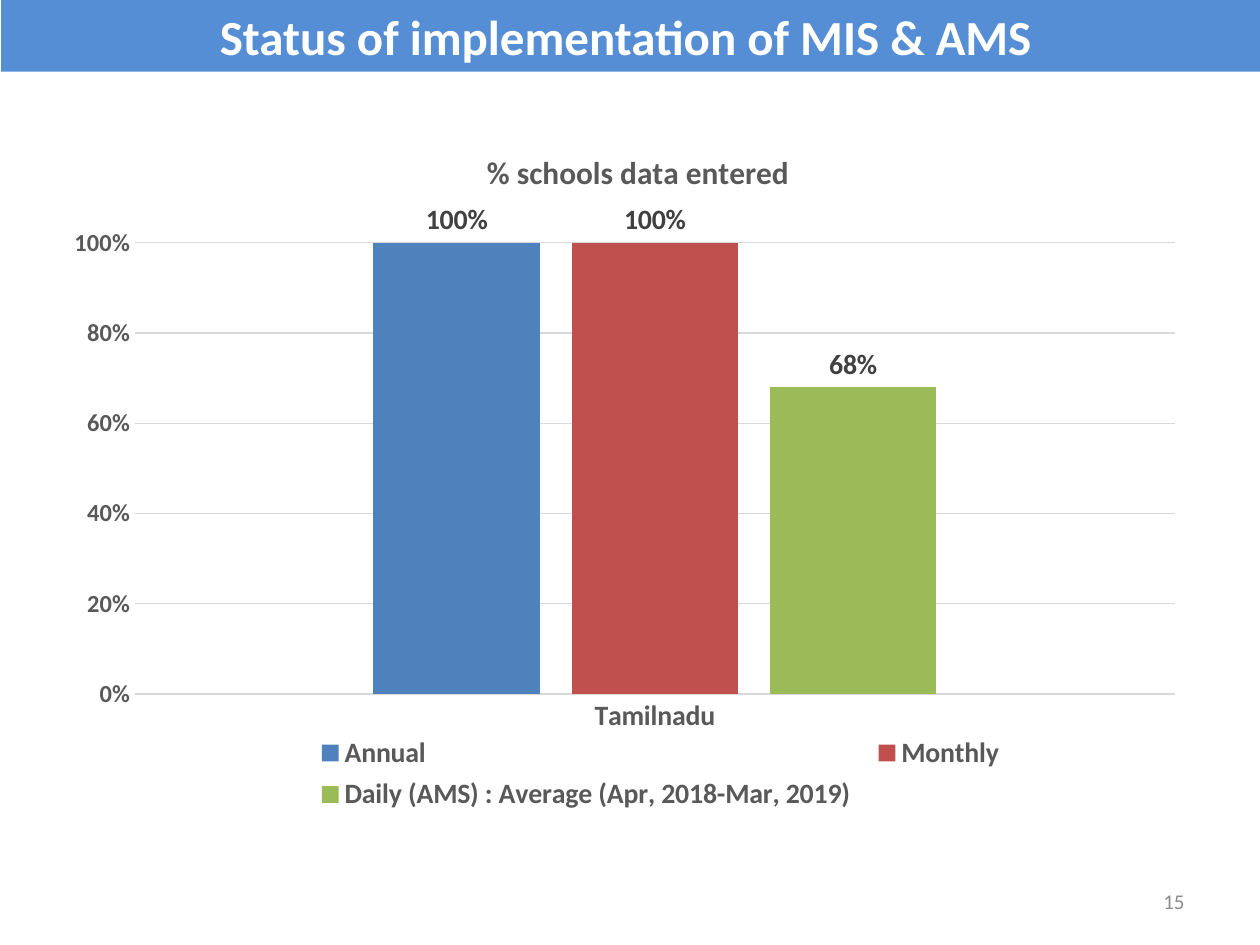
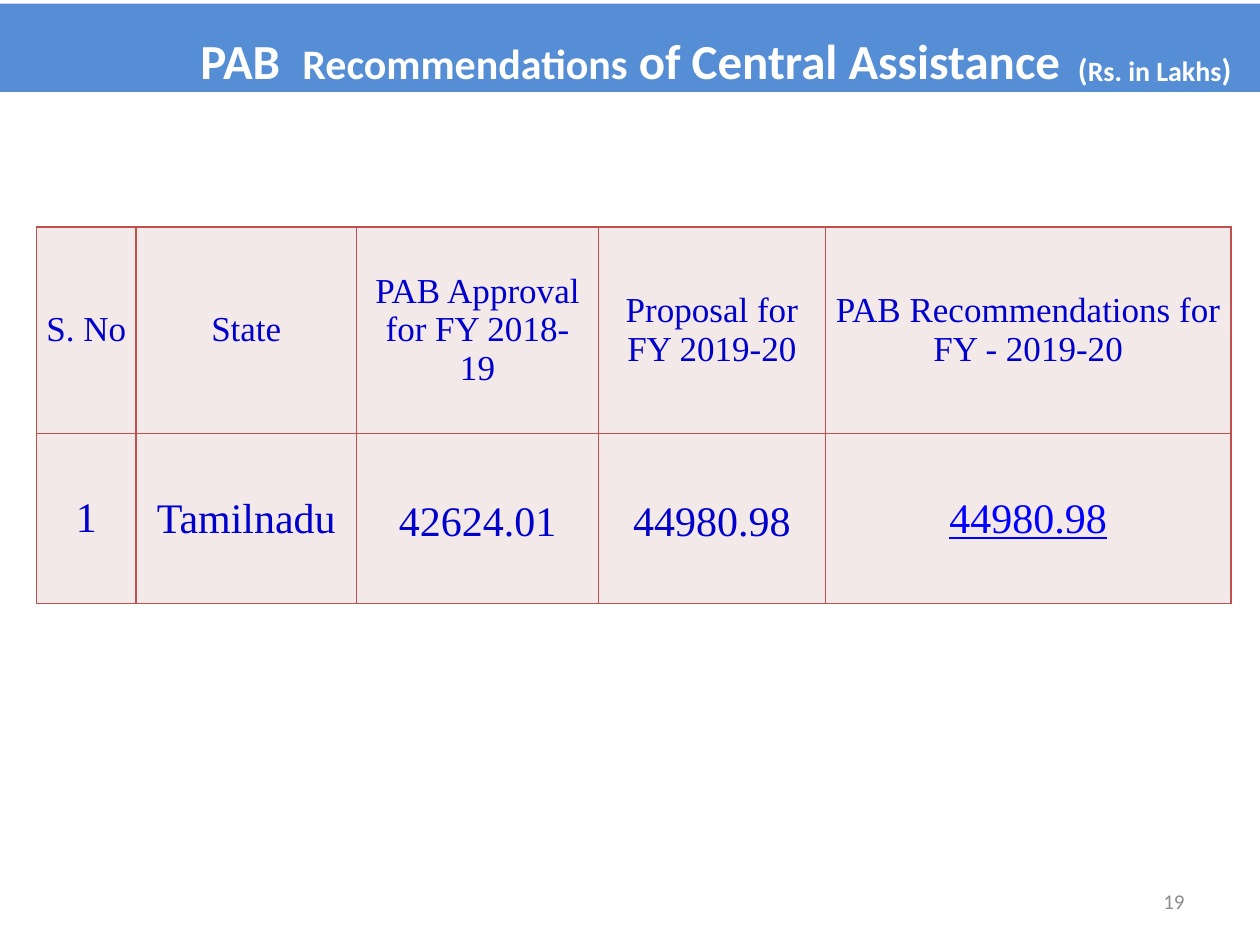
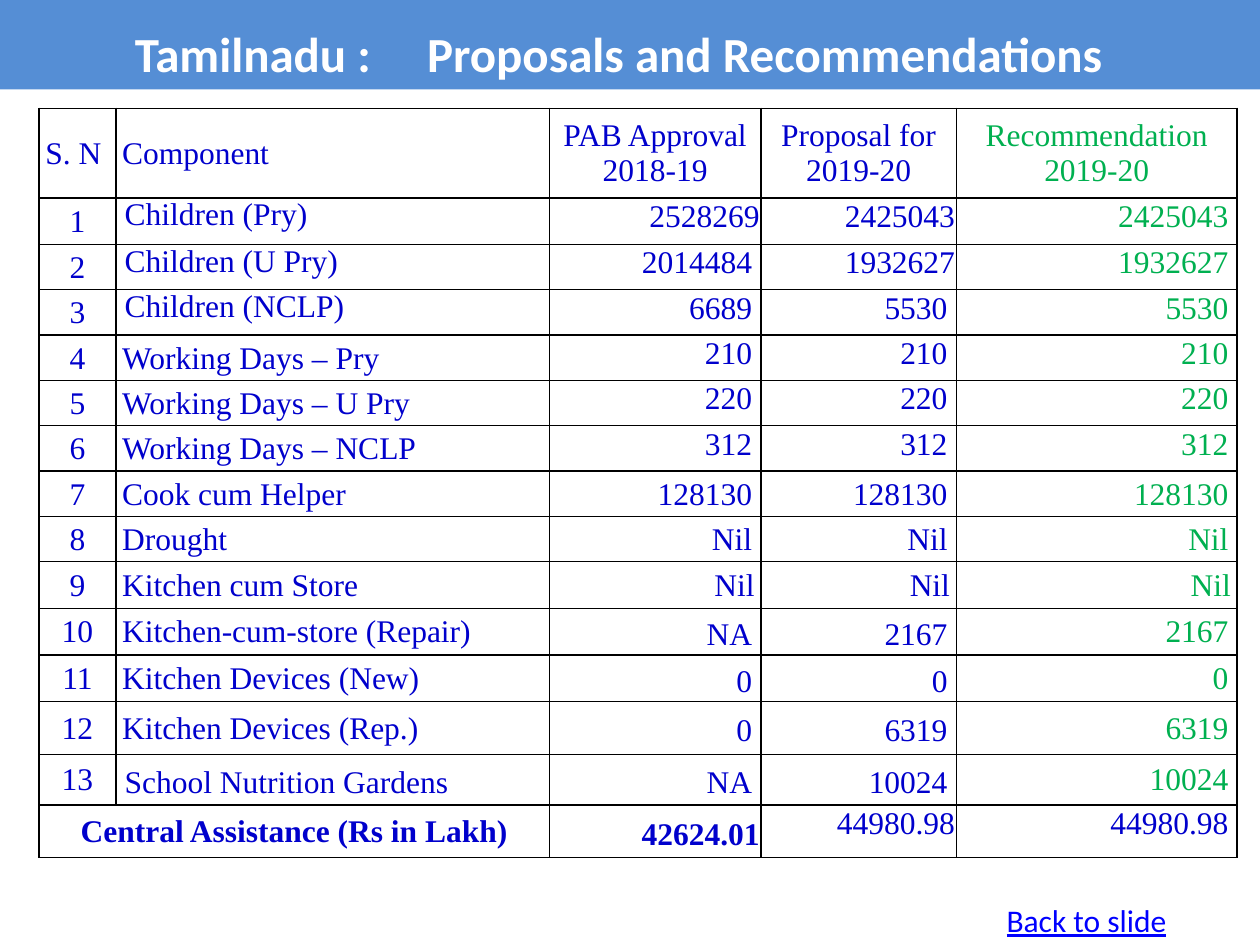
from dataclasses import dataclass, replace
from typing import NamedTuple

from lxml.etree import SubElement
from pptx import Presentation
from pptx.chart.data import CategoryChartData as Data
from pptx.dml.color import RGBColor
from pptx.enum.chart import XL_CHART_TYPE as Kind, XL_LABEL_POSITION as Spot
from pptx.enum.chart import XL_LEGEND_POSITION as Side, XL_TICK_MARK as Tick
from pptx.enum.shapes import MSO_SHAPE as Form
from pptx.enum.text import MSO_ANCHOR as Anchor, PP_ALIGN as Align
from pptx.oxml import parse_xml
from pptx.oxml.ns import nsdecls, qn
from pptx.util import Pt

# Scale and shared look
PX = 9144  # 100 px to the inch
SANS, SERIF = "Calibri", "Times New Roman"
WHITE, BLACK, BAND, GREY = "FFFFFF", "000000", "558ED5", "8C8C8C"
NAVY, LINK, GREEN, RED, ROSE = "0000CC", "0000FF", "00B050", "C0504D", "F4E9E9"
DARK, MID, PALE = "404040", "595959", "D9D9D9"
LEFT, CENTER, RIGHT = Align.LEFT, Align.CENTER, Align.RIGHT


class Box(NamedTuple):
    x: int
    y: int
    w: int
    h: int

    def emu(self) -> list[int]:
        return [side * PX for side in self]


class Part(NamedTuple):
    text: str
    size: int


@dataclass(frozen=True)
class Style:
    """Format of one table cell."""
    size: int = 18
    hue: str = NAVY
    align: Align = LEFT
    bold: bool = False
    under: bool = False
    space: float | None = None
    after: int = 0
    side: int = 5
    top: int = 1
    mid: bool = True


class Row(NamedTuple):
    name: str
    vals: list[str]
    label: Style
    cells: list[Style]


def rgb(hue: str) -> RGBColor:
    return RGBColor.from_string(hue)


def ink(font, size: int, hue: str, bold: bool = True, face: str = SANS) -> None:
    font.size, font.bold, font.name = Pt(size), bold, face
    font.color.rgb = rgb(hue)


def say(frame, text: str, *, size: int = 18, hue: str = WHITE, face: str = SANS,
        bold: bool = False, under: bool = False, align: Align = LEFT,
        space: float | None = None, after: int = 0, more: bool = False) -> None:
    """Write text, one paragraph a line; more adds to the last paragraph."""
    for i, line in enumerate(text.split("\n")):
        par = frame.add_paragraph() if i else frame.paragraphs[-1]
        if not more:
            par.alignment, par.space_after = align, Pt(after)
            if space:
                par.line_spacing = space
        run = par.add_run()
        run.text = line
        ink(run.font, size, hue, bold, face)
        if under:
            run.font.underline = True


def join(frame, parts: list[Part], **fmt) -> None:
    for i, part in enumerate(parts):
        say(frame, part.text, size=part.size, more=i > 0, **fmt)


def band(slide, box: Box, parts: list[Part], left: int = 10, right: int = 10,
         stop: int = 0, **fmt) -> None:
    """Title band; stop is the tab stop that parts the title."""
    shape = slide.shapes.add_shape(Form.RECTANGLE, *box.emu())
    shape.shadow.inherit = False
    shape.fill.solid()
    shape.fill.fore_color.rgb = rgb(BAND)
    shape.line.fill.background()
    frame = shape.text_frame
    frame.word_wrap, frame.vertical_anchor = True, Anchor.MIDDLE
    frame.margin_left, frame.margin_right = left * PX, right * PX
    join(frame, parts, bold=True, **fmt)
    if stop:
        props = frame.paragraphs[0]._p.get_or_add_pPr()
        tabs = SubElement(props, qn("a:tabLst"))
        SubElement(tabs, qn("a:tab"), pos=str(stop * PX), algn="l")


def note(slide, box: Box, parts: list[Part], wrap: bool = True,
         anchor: Anchor = Anchor.TOP, **fmt) -> None:
    frame = slide.shapes.add_textbox(*box.emu()).text_frame
    frame.word_wrap, frame.vertical_anchor = wrap, anchor
    join(frame, parts, **fmt)


def page(slide, num: int) -> None:
    note(slide, Box(717, 695, 233, 40), [Part(str(num), 12)],
         anchor=Anchor.MIDDLE, hue=GREY, align=RIGHT)


# Tables
def grid(slide, x: int, y: int, cols: list[int], rows: list[int]):
    box = Box(x, y, sum(cols), sum(rows))
    table = slide.shapes.add_table(len(rows), len(cols), *box.emu()).table
    table.first_row = table.horz_banding = False
    for col, width in zip(table.columns, cols):
        col.width = width * PX
    for row, height in zip(table.rows, rows):
        row.height = height * PX
    return table


def paint(table, fill: str, edge: str) -> None:
    for cell in table.iter_cells():
        props = cell._tc.get_or_add_tcPr()
        for side in ("lnL", "lnR", "lnT", "lnB"):
            props.append(parse_xml(
                f'<a:{side} {nsdecls("a")} w="12700"><a:solidFill>'
                f'<a:srgbClr val="{edge}"/></a:solidFill></a:{side}>'))
        cell.fill.solid()
        cell.fill.fore_color.rgb = rgb(fill)


def enter(cell, text: str, look: Style) -> None:
    cell.margin_left = cell.margin_right = look.side * PX
    cell.margin_top, cell.margin_bottom = look.top * PX, 0
    cell.vertical_anchor = Anchor.MIDDLE if look.mid else Anchor.TOP
    say(cell.text_frame, text, size=look.size, hue=look.hue, face=SERIF,
        bold=look.bold, under=look.under, align=look.align,
        space=look.space, after=look.after)


# Chart
def place(item, x: float, y: float, w: float, h: float, inner: bool = False) -> None:
    """Fix the layout of a chart part as shares of the chart."""
    old = item.find(qn("c:layout"))
    if old is not None:
        item.remove(old)
    target = '<c:layoutTarget val="inner"/>' if inner else ""
    sizes = "".join(f'<c:{key} val="{val}"/>'
                    for key, val in zip("xywh", (x, y, w, h)))
    layout = parse_xml(
        f'<c:layout {nsdecls("c")}><c:manualLayout>{target}<c:xMode val="edge"/>'
        f'<c:yMode val="edge"/>{sizes}</c:manualLayout></c:layout>')
    if inner:
        item.insert(0, layout)
    else:
        item.find(qn("c:legendPos")).addnext(layout)


def draw(slide, box: Box, bars: list[tuple[str, float, str]]) -> None:
    data = Data(number_format="0%")
    data.categories = ["Tamilnadu"]
    for name, val, _ in bars:
        data.add_series(name, [val])
    chart = slide.shapes.add_chart(Kind.COLUMN_CLUSTERED, *box.emu(), data).chart
    ink(chart.font, 10, BLACK, False)
    chart.has_title = True
    title = chart.chart_title.text_frame
    say(title, "% schools data entered", size=18, hue=MID, bold=True, align=CENTER)

    plot = chart.plots[0]
    plot.gap_width, plot.overlap, plot.vary_by_categories = 286, -19, False
    for series, (_, _, hue) in zip(plot.series, bars):
        series.format.fill.solid()
        series.format.fill.fore_color.rgb = rgb(hue)
        tags = series.data_labels
        tags.show_value, tags.position = True, Spot.OUTSIDE_END
        tags.number_format, tags.number_format_is_linked = "0%", False
        ink(tags.font, 16, DARK)

    names, vals = chart.category_axis, chart.value_axis
    for axis, size in ((names, 16), (vals, 14)):
        axis.major_tick_mark = axis.minor_tick_mark = Tick.NONE
        ink(axis.tick_labels.font, size, MID)
    vals.minimum_scale, vals.maximum_scale, vals.major_unit = 0, 1, 0.2
    vals.tick_labels.number_format = "0%"
    vals.tick_labels.number_format_is_linked = False
    vals.format.line.fill.background()
    vals.has_major_gridlines = True
    for line in (names.format.line, vals.major_gridlines.format.line):
        line.color.rgb, line.width = rgb(PALE), Pt(0.75)

    chart.has_legend = True
    legend = chart.legend
    legend.position, legend.include_in_layout = Side.BOTTOM, False
    ink(legend.font, 16, MID)
    place(legend._element, 0.2, 0.87, 0.64, 0.13)
    place(chart._chartSpace.chart.plotArea, 0.05, 0.17, 0.93, 0.65, inner=True)


# Slides
def status(slide) -> None:
    draw(slide, Box(59, 99, 891, 551), [
        ("Annual", 1, "4F81BD"),
        ("Monthly", 1, RED),
        ("Daily (AMS) : Average (Apr, 2018-Mar, 2019)", 0.68, "9BBB59")])
    band(slide, Box(1, 0, 999, 57), [Part("Status of implementation of MIS & AMS", 28)],
         right=18, align=CENTER)
    page(slide, 15)


def funds(slide) -> None:
    band(slide, Box(0, 3, 1000, 70),
         [Part("PAB\t", 28), Part("Recommendations", 24),
          Part(" of Central Assistance", 28)],
         left=159, stop=81, space=1.4)
    head = Style(size=20, align=CENTER, side=7, top=0)
    body = replace(head, size=24, side=1, top=1)
    sum_up = replace(body, space=1.15, after=10)
    cells = [
        [("S. No", head), ("State", head),
         ("PAB Approval for FY 2018-19", replace(head, side=12)),
         ("Proposal for\nFY 2019-20", head),
         ("PAB Recommendations for\nFY - 2019-20", head)],
        [("1", replace(head, size=24)), ("Tamilnadu", body), ("42624.01", sum_up),
         ("44980.98", sum_up),
         ("44980.98", replace(body, side=7, hue=LINK, under=True))]]
    table = grid(slide, 29, 180, [79, 175, 192, 180, 322], [164, 135])
    paint(table, ROSE, RED)
    for r, line in enumerate(cells):
        for c, (text, look) in enumerate(line):
            enter(table.cell(r, c), text, look)
    page(slide, 19)
    note(slide, Box(845, 35, 143, 40),
         [Part("(", 18), Part("Rs. in Lakhs", 16), Part(")", 18)],
         wrap=False, bold=True, align=CENTER)


def detail(slide) -> None:
    band(slide, Box(0, -5, 1000, 76),
         [Part("Tamilnadu :\tProposals and Recommendations", 28)],
         left=107, stop=232, space=1.4)

    # Cell styles
    near = Style()
    mid = replace(near, align=CENTER)
    child = Style(side=7, top=0, mid=False)
    num = Style(align=RIGHT, side=7)
    high = replace(num, mid=False)
    flush = replace(high, side=1)
    loose = replace(num, space=1.15)
    tight = replace(num, side=5)
    total = replace(loose, side=1, after=10, bold=True)
    even, tall, low = [num] * 3, [high] * 3, [loose, loose, num]

    rows = [
        Row("Children (Pry)", ["2528269", "2425043", "2425043"],
            child, [flush, flush, high]),
        Row("Children (U Pry)", ["2014484", "1932627", "1932627"],
            child, [high, flush, high]),
        Row("Children (NCLP)", ["6689", "5530", "5530"], child, tall),
        Row("Working Days – Pry", ["210"] * 3, near, tall),
        Row("Working Days – U Pry", ["220"] * 3, near, tall),
        Row("Working Days – NCLP", ["312"] * 3, near, tall),
        Row("Cook cum Helper", ["128130"] * 3, near, even),
        Row("Drought", ["Nil"] * 3, near, even),
        Row("Kitchen cum Store", ["Nil"] * 3, near, [tight] * 3),
        Row("Kitchen-cum-store (Repair)", ["NA", "2167", "2167"], near, low),
        Row("Kitchen Devices (New)", ["0"] * 3, near, low),
        Row("Kitchen Devices (Rep.)", ["0", "6319", "6319"], near, low),
        Row("School Nutrition Gardens", ["NA", "10024", "10024"],
            replace(near, side=7, space=1.15), low)]
    table = grid(slide, 31, 86, [61, 344, 168, 155, 223],
                 [71, 37] + [36] * 7 + [37] * 3 + [42, 40, 42])
    paint(table, WHITE, BLACK)

    # Head, numbered rows, total
    heads = ["S. N", "Component", "PAB Approval 2018-19",
             "Proposal for\n2019-20", "Recommendation\n2019-20"]
    looks = [near, near, mid, mid, replace(mid, hue=GREEN)]
    for c, (text, look) in enumerate(zip(heads, looks)):
        enter(table.cell(0, c), text, look)
    for r, row in enumerate(rows, 1):
        enter(table.cell(r, 0), str(r), mid)
        enter(table.cell(r, 1), row.name, row.label)
        for c, (text, look) in enumerate(zip(row.vals, row.cells), 2):
            hue = GREEN if c == 4 else NAVY
            enter(table.cell(r, c), text, replace(look, hue=hue))
    last = len(rows) + 1
    table.cell(last, 0).merge(table.cell(last, 1))
    enter(table.cell(last, 0), "Central Assistance (Rs in Lakh)",
          replace(mid, bold=True))
    sums = [("42624.01", total), ("44980.98", flush), ("44980.98", high)]
    for c, (text, look) in enumerate(sums, 2):
        enter(table.cell(last, c), text, look)

    note(slide, Box(789, 710, 236, 40), [Part("Back to slide", 18)],
         hue=LINK, under=True)


def main() -> None:
    deck = Presentation()
    deck.slide_width, deck.slide_height = 1000 * PX, 750 * PX
    for build in (status, funds, detail):
        build(deck.slides.add_slide(deck.slide_layouts[6]))
    deck.save("out.pptx")


if __name__ == "__main__":
    main()
